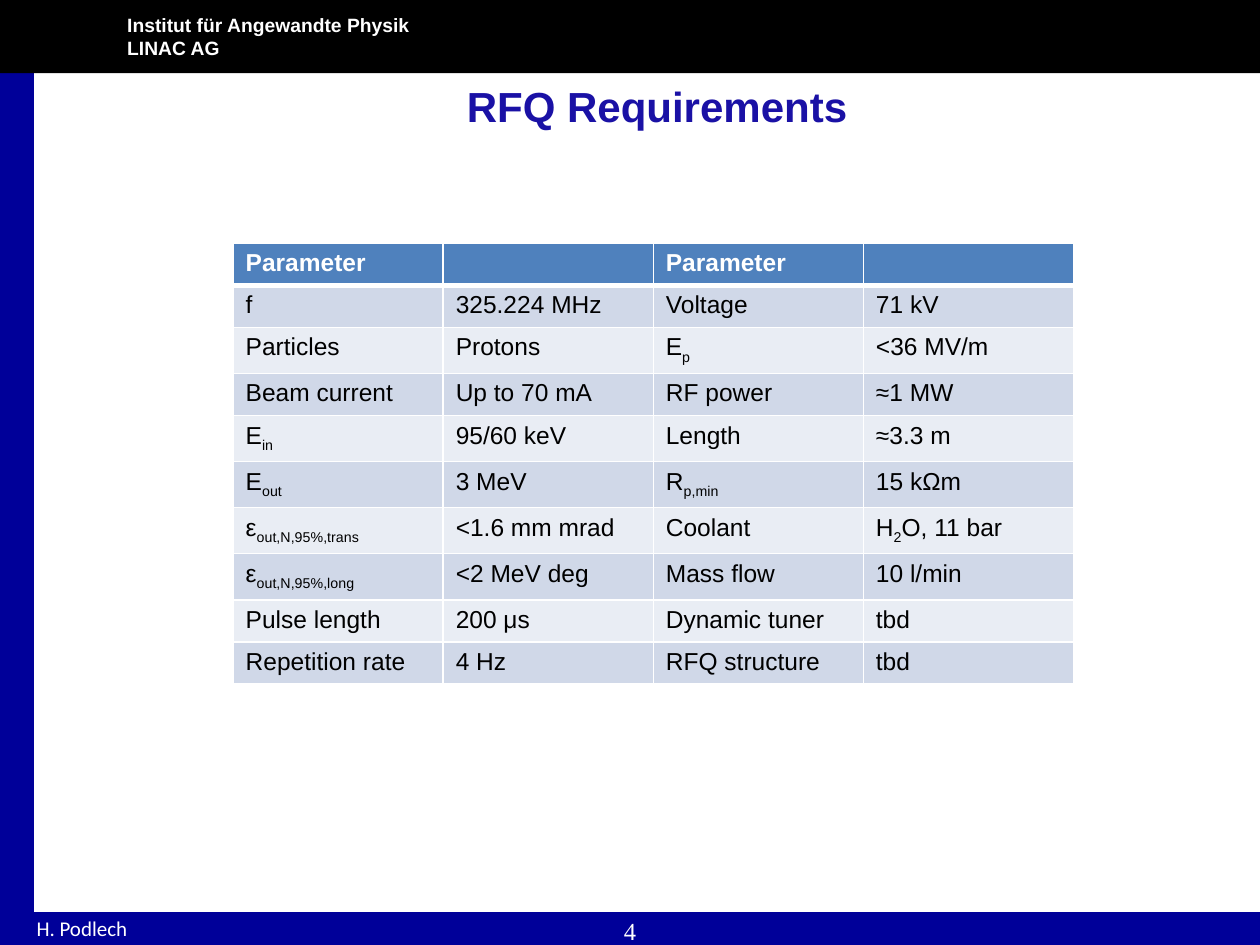
from lxml import etree
from pptx import Presentation
from pptx.dml.color import RGBColor
from pptx.enum.shapes import MSO_SHAPE
from pptx.enum.text import MSO_ANCHOR, PP_ALIGN
from pptx.oxml.ns import qn
from pptx.util import Inches, Pt

RECTANGLE = MSO_SHAPE.RECTANGLE
TOP, MIDDLE = MSO_ANCHOR.TOP, MSO_ANCHOR.MIDDLE
LEFT, CENTER = PP_ALIGN.LEFT, PP_ALIGN.CENTER
SLIDE_W, SLIDE_H = 10, 7.5
TITLE_ONLY = 5

COLORS = {
    "navy": "000099", "black": "000000", "white": "FFFFFF", "title": "1A11A5",
    "header": "4F81BD", "odd": "D0D8E8", "even": "E9EDF4",
}

# Text between bars is set as a subscript
PARAMETERS = [
    ("Parameter", "", "Parameter", ""),
    ("f", "325.224 MHz", "Voltage", "71 kV"),
    ("Particles", "Protons", "E|p|", "<36 MV/m"),
    ("Beam current", "Up to 70 mA", "RF power", "≈1 MW"),
    ("E|in|", "95/60 keV", "Length", "≈3.3 m"),
    ("E|out|", "3 MeV", "R|p,min|", "15 kΩm"),
    ("ε|out,N,95%,trans|", "<1.6 mm mrad", "Coolant", "H|2|O, 11 bar"),
    ("ε|out,N,95%,long|", "<2 MeV deg", "Mass flow", "10 l/min"),
    ("Pulse length", "200 μs", "Dynamic tuner", "tbd"),
    ("Repetition rate", "4 Hz", "RFQ structure", "tbd"),
]


def rgb(name):
    return RGBColor.from_string(COLORS[name])


def emu(box):
    return [Inches(length) for length in box]


def format_font(font, color, **values):
    for attribute, value in values.items():
        setattr(font, attribute, value)
    font.color.rgb = rgb(color)


def write(frame, lines, color, align=LEFT, anchor=TOP, inset=None, **font):
    """Fill a text frame with one paragraph per line."""
    frame.word_wrap = True
    frame.vertical_anchor = anchor
    if inset:
        frame.margin_left = frame.margin_right = Inches(inset[0])
        frame.margin_top = frame.margin_bottom = Inches(inset[1])
    for index, line in enumerate(lines):
        paragraph = frame.add_paragraph() if index else frame.paragraphs[0]
        paragraph.alignment = align
        run = paragraph.add_run()
        run.text = line
        format_font(run.font, color, **font)


def add_label(slide, box, lines, color="white", **style):
    label = slide.shapes.add_textbox(*emu(box))
    write(label.text_frame, lines, color, **style)


def add_band(slide, box, color):
    band = slide.shapes.add_shape(RECTANGLE, *emu(box))
    band.shadow.inherit = False
    band.fill.solid()
    band.fill.fore_color.rgb = rgb(color)
    band.line.fill.background()


def add_sidebar(slide, box):
    add_band(slide, box, "navy")


def add_header(slide, box):
    left, top, width, height = box
    add_band(slide, box, "black")
    add_label(slide, (left + 0.098 * width, top + 0.16 * height, 0.256 * width, 0.67 * height),
              ["Institut für Angewandte Physik", "LINAC AG"],
              inset=(0.03, 0.01), name="Arial", size=Pt(11), bold=True)


def add_footer(slide, box):
    left, top, width, height = box
    add_band(slide, box, "navy")
    add_label(slide, (left + 0.027 * width, top + 0.02, 0.19 * width, height),
              ["H. Podlech"], inset=(0.02, 0.01), name="Calibri", size=Pt(12))
    add_label(slide, (left + 0.44 * width, top - 0.02, 0.12 * width, 0.85 * height),
              ["4"], align=CENTER, name="Times New Roman", size=Pt(14))


def add_title(slide, box):
    title = slide.shapes.title
    title.left, title.top, title.width, title.height = emu(box)
    write(title.text_frame, ["RFQ Requirements"], "title", align=CENTER,
          anchor=MIDDLE, name="Arial", size=Pt(24), bold=True)


def set_borders(cell, widths):
    """Draw white cell edges; widths maps an edge tag to points."""
    properties = cell._tc.get_or_add_tcPr()
    for edge, points in widths.items():
        line = etree.SubElement(properties, qn(f"a:{edge}"), w=str(Pt(points)))
        fill = etree.SubElement(line, qn("a:solidFill"))
        etree.SubElement(fill, qn("a:srgbClr"), val=COLORS["white"])


def write_cell(cell, text, is_header):
    paragraph = cell.text_frame.paragraphs[0]
    if not text:
        # Keeps an empty cell from stretching its row
        etree.SubElement(paragraph._p, qn("a:endParaRPr"), sz="1400")
        return
    for index, part in enumerate(text.split("|")):
        if not part:
            continue
        run = paragraph.add_run()
        run.text = part
        format_font(run.font, "white" if is_header else "black",
                    name="Arial", size=Pt(14), bold=is_header)
        if index % 2:
            run._r.get_or_add_rPr().set("baseline", "-25000")


def add_parameter_table(slide, box):
    row_count, column_count = len(PARAMETERS), len(PARAMETERS[0])
    table = slide.shapes.add_table(row_count, column_count, *emu(box)).table
    for column in table.columns:
        column.width = Inches(box[2] / column_count)
    for r, texts in enumerate(PARAMETERS):
        # Rows grow to fit their text
        table.rows[r].height = Inches(box[3] / row_count)
        band = "header" if r == 0 else "odd" if r % 2 else "even"
        borders = {"lnL": 1, "lnR": 1, "lnT": 3 if r == 1 else 1, "lnB": 3 if r == 0 else 1}
        for c, text in enumerate(texts):
            cell = table.cell(r, c)
            set_borders(cell, borders)
            cell.fill.solid()
            cell.fill.fore_color.rgb = rgb(band)
            write_cell(cell, text, r == 0)


def main():
    presentation = Presentation()
    presentation.slide_width, presentation.slide_height = emu((SLIDE_W, SLIDE_H))
    slide = presentation.slides.add_slide(presentation.slide_layouts[TITLE_ONLY])

    # Frame of the slide
    add_sidebar(slide, (-0.01, 0, 0.028 * SLIDE_W, SLIDE_H))
    add_header(slide, (0, 0, SLIDE_W, 0.58))
    add_footer(slide, (0, 7.24, SLIDE_W, 0.27))

    # Content
    add_title(slide, (1.91, 0.59, 6.61, 0.5))
    add_parameter_table(slide, (1.85, 1.93, 6.67, 2.6))

    presentation.save("out.pptx")


if __name__ == "__main__":
    main()
